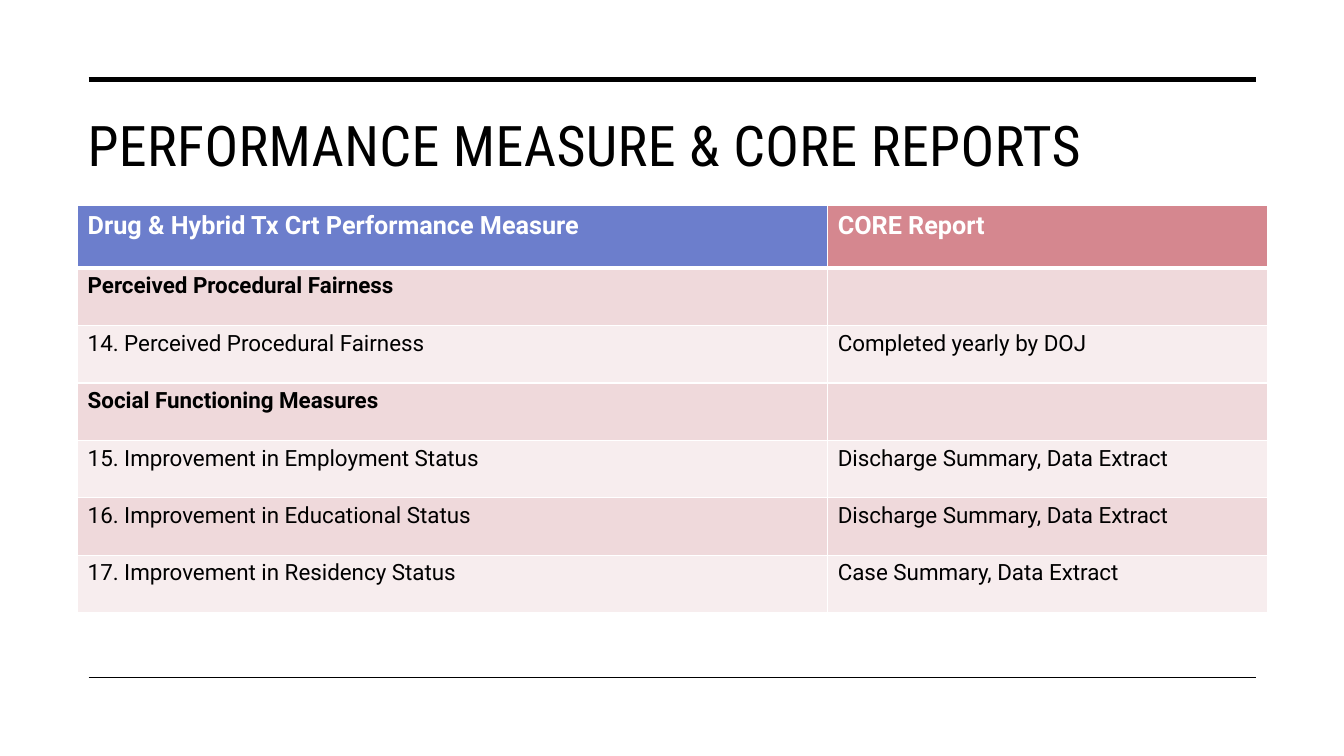
from lxml.etree import SubElement
from pptx import Presentation
from pptx.dml.color import RGBColor
from pptx.enum.shapes import MSO_CONNECTOR
from pptx.enum.text import MSO_ANCHOR
from pptx.oxml.ns import qn
from pptx.util import Inches, Pt

BLACK = RGBColor(0x00, 0x00, 0x00)
WHITE = RGBColor(0xFF, 0xFF, 0xFF)
BLUE = RGBColor(0x6C, 0x7E, 0xCC)
ROSE = RGBColor(0xD5, 0x87, 0x8F)
PINK = RGBColor(0xEF, 0xD9, 0xDB)
PALE_PINK = RGBColor(0xF7, 0xED, 0xEE)

COLUMN_WIDTHS = (7.44, 4.36)
HEADER_HEIGHT = 0.62
ROW_HEIGHT = 0.57
HEADER = ("Drug & Hybrid Tx Crt Performance Measure", "CORE Report")
MEASURES = (
    ("Perceived Procedural Fairness", ""),
    ("14. Perceived Procedural Fairness", "Completed yearly by DOJ"),
    ("Social Functioning Measures", ""),
    ("15. Improvement in Employment Status", "Discharge Summary, Data Extract"),
    ("16. Improvement in Educational Status", "Discharge Summary, Data Extract"),
    ("17. Improvement in Residency Status", "Case Summary, Data Extract"),
)


def write_text(text_frame, text, size=16, font="Roboto", color=BLACK, bold=False, spacing=None):
    """Put one run in the frame; spacing is letter spacing in points."""
    run = text_frame.paragraphs[0].add_run()
    run.text = text
    run.font.size = Pt(size)
    run.font.name = font
    run.font.color.rgb = color
    run.font.bold = bold
    if spacing is not None:
        run.font._element.set("spc", str(round(spacing * 100)))


def add_rule(slide, top, width):
    rule = slide.shapes.add_connector(
        MSO_CONNECTOR.STRAIGHT, Inches(0.88), Inches(top), Inches(12.46), Inches(top))
    rule.line.color.rgb = BLACK
    rule.line.width = Pt(width)
    SubElement(rule._element.spPr, qn("a:effectLst"))


def add_title(slide, text):
    box = slide.shapes.add_textbox(Inches(0.77), Inches(1.01), Inches(11.69), Inches(1.03))
    text_frame = box.text_frame
    text_frame.word_wrap = True
    text_frame.vertical_anchor = MSO_ANCHOR.TOP
    text_frame.margin_top = Inches(0.09)
    write_text(text_frame, text, size=40, font="Roboto Condensed", spacing=0.3)


def set_borders(cell, top=1, bottom=1):
    """Draw white borders; widths are in points and must precede the fill."""
    properties = cell._tc.get_or_add_tcPr()
    for side, width in (("L", 1), ("R", 1), ("T", top), ("B", bottom)):
        border = SubElement(properties, qn(f"a:ln{side}"), w=str(Pt(width)))
        fill = SubElement(border, qn("a:solidFill"))
        SubElement(fill, qn("a:srgbClr"), val=str(WHITE))


def format_cell(cell, text, fill, top=1, bottom=1, **text_format):
    set_borders(cell, top, bottom)
    cell.fill.solid()
    cell.fill.fore_color.rgb = fill
    if text:
        write_text(cell.text_frame, text, **text_format)


def add_measure_table(slide):
    height = HEADER_HEIGHT + ROW_HEIGHT * len(MEASURES)
    table = slide.shapes.add_table(
        len(MEASURES) + 1, len(COLUMN_WIDTHS), Inches(0.77), Inches(2.04),
        Inches(sum(COLUMN_WIDTHS)), Inches(height)).table
    for column, width in zip(table.columns, COLUMN_WIDTHS):
        column.width = Inches(width)
    for index, row in enumerate(table.rows):
        row.height = Inches(ROW_HEIGHT if index else HEADER_HEIGHT)

    for column, (text, fill) in enumerate(zip(HEADER, (BLUE, ROSE))):
        format_cell(table.cell(0, column), text, fill, bottom=3,
                    size=18, color=WHITE, bold=True)
    for row, measure in enumerate(MEASURES, start=1):
        is_section = not measure[1]
        for column, text in enumerate(measure):
            format_cell(table.cell(row, column), text, PINK if row % 2 else PALE_PINK,
                        top=3 if row == 1 else 1, bold=is_section)


def main():
    presentation = Presentation()
    presentation.slide_width = Inches(13.33)
    presentation.slide_height = Inches(7.5)
    slide = presentation.slides.add_slide(presentation.slide_layouts[6])
    add_rule(slide, top=0.79, width=3.5)
    add_rule(slide, top=6.72, width=1)
    add_title(slide, "PERFORMANCE MEASURE & CORE REPORTS")
    add_measure_table(slide)
    presentation.save("out.pptx")


if __name__ == "__main__":
    main()
